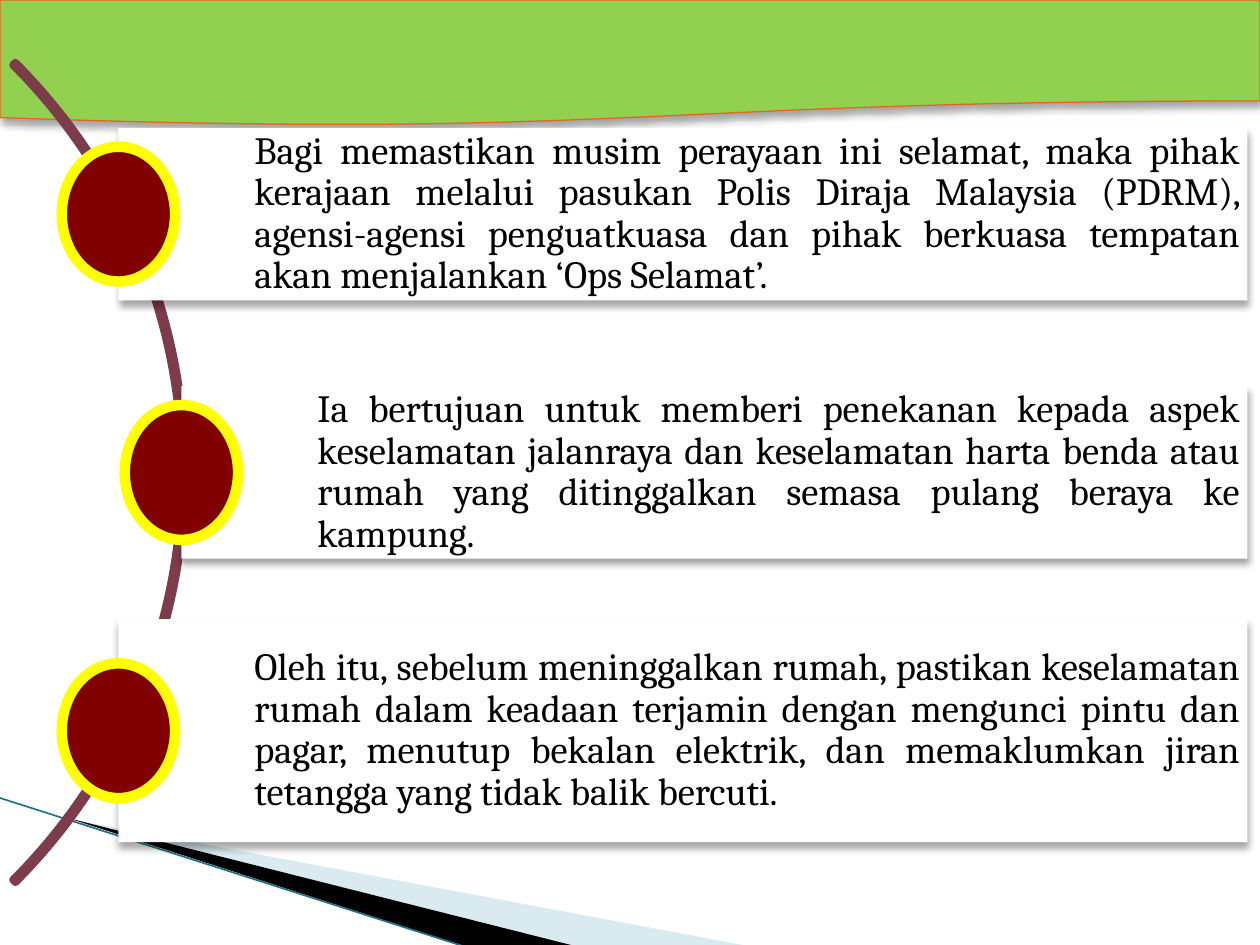
from dataclasses import dataclass

from lxml.etree import SubElement
from pptx import Presentation
from pptx.dml.color import RGBColor
from pptx.enum.shapes import MSO_CONNECTOR, MSO_SHAPE
from pptx.enum.text import MSO_ANCHOR, PP_ALIGN
from pptx.oxml.ns import qn
from pptx.util import Inches, Pt


@dataclass(frozen=True)
class Theme:
    pale_blue: str = "A0CBDC"
    teal: str = "1F7288"
    green: str = "92D050"
    orange: str = "EB641B"
    plum: str = "7D3C4A"
    maroon: str = "800000"
    yellow: str = "FFFF00"
    white: str = "FFFFFF"
    black: str = "000000"
    font: str = "Cambria"
    body_size: float = 22


THEME = Theme()
CARD_RIGHT = 9.9
BULLET_WIDTH, BULLET_HEIGHT = 0.9, 1.07
FIRST_CENTER, CENTER_STEP = 1.7, 2.05

# Left edge, height and text of each card
POINTS = [
    (0.94, 1.37,
     "Bagi memastikan musim perayaan ini selamat, maka pihak kerajaan melalui "
     "pasukan Polis Diraja Malaysia (PDRM), agensi-agensi penguatkuasa dan pihak "
     "berkuasa tempatan akan menjalankan ‘Ops Selamat’."),
    (1.44, 1.37,
     "Ia bertujuan untuk memberi penekanan kepada aspek keselamatan jalanraya dan "
     "keselamatan harta benda atau rumah yang ditinggalkan semasa pulang beraya ke "
     "kampung."),
    (0.94, 1.77,
     "Oleh itu, sebelum meninggalkan rumah, pastikan keselamatan rumah dalam "
     "keadaan terjamin dengan mengunci pintu dan pagar, menutup bekalan elektrik, "
     "dan memaklumkan jiran tetangga yang tidak balik bercuti."),
]


def style(shape, fill=None, line=None, width=0.75):
    shape.shadow.inherit = False
    if fill:
        shape.fill.solid()
        shape.fill.fore_color.rgb = RGBColor.from_string(fill)
    else:
        shape.fill.background()
    if line:
        shape.line.color.rgb = RGBColor.from_string(line)
        shape.line.width = Pt(width)
    else:
        shape.line.fill.background()


def add_alpha(color, percent):
    SubElement(color, qn("a:alpha"), val=str(percent * 1000))


def add_drop_shadow(shape):
    effects = shape._element.spPr.find(qn("a:effectLst"))
    shadow = SubElement(effects, qn("a:outerShdw"), blurRad=str(Pt(4)),
                        dist=str(Pt(3)), dir="5400000", rotWithShape="0")
    add_alpha(SubElement(shadow, qn("a:srgbClr"), val=THEME.black), 35)


def add_preset(slide, kind, box, **look):
    shape = slide.shapes.add_shape(kind, *map(Inches, box))
    style(shape, **look)
    return shape


def add_wedge(slide, corners, fill):
    start, *rest = [(Inches(x), Inches(y)) for x, y in corners]
    builder = slide.shapes.build_freeform(*start)
    builder.add_line_segments(rest, close=True)
    wedge = builder.convert_to_shape()
    style(wedge, fill=fill)
    return wedge


def add_corner_decoration(slide):
    pale_wedge = add_wedge(
        slide, [(0.55, 6.5), (5.95, 7.51), (4.56, 7.51)], THEME.pale_blue)
    add_alpha(pale_wedge._element.spPr.find(qn("a:solidFill"))[0], 40)
    add_wedge(slide, [(0.53, 6.49), (4.57, 7.51), (3.72, 7.52)], THEME.black)
    edge = slide.shapes.add_connector(
        MSO_CONNECTOR.STRAIGHT, Inches(-0.01), Inches(6.33), Inches(3.71), Inches(7.52))
    edge.line.color.rgb = RGBColor.from_string(THEME.teal)
    edge.line.width = Pt(0.95)
    SubElement(edge._element.spPr, qn("a:effectLst"))


def add_banner(slide, box):
    banner = add_preset(slide, MSO_SHAPE.FLOWCHART_DOCUMENT, box,
                        fill=THEME.green, line=THEME.orange)
    add_drop_shadow(banner)


def add_arc(slide, box):
    """Draw the right-hand quarter of a thin ring, from 315 to 45 degrees."""
    arc = add_preset(slide, MSO_SHAPE.BLOCK_ARC, box, line=THEME.plum, width=4.33)
    for index, value in enumerate((189, 27, 0.003)):
        arc.adjustments[index] = value


def add_card(slide, box, text):
    card = add_preset(slide, MSO_SHAPE.RECTANGLE, box, fill=THEME.white)
    add_drop_shadow(card)
    frame = card.text_frame
    frame.word_wrap = True
    frame.vertical_anchor = MSO_ANCHOR.MIDDLE
    frame.margin_left = Inches(1.08)
    frame.margin_top = frame.margin_right = frame.margin_bottom = Inches(0.06)
    paragraph = frame.paragraphs[0]
    paragraph.alignment = PP_ALIGN.JUSTIFY
    paragraph.line_spacing = 0.9
    run = paragraph.add_run()
    run.text = text
    run.font.name = THEME.font
    run.font.size = Pt(THEME.body_size)
    run.font.color.rgb = RGBColor.from_string(THEME.black)


def add_point(slide, left, center, height, text):
    """Place a card and the bullet centred on its left edge."""
    add_card(slide, (left, center - height / 2, CARD_RIGHT - left, height), text)
    bullet_box = (left - BULLET_WIDTH / 2, center - BULLET_HEIGHT / 2,
                  BULLET_WIDTH, BULLET_HEIGHT)
    add_preset(slide, MSO_SHAPE.OVAL, bullet_box,
               fill=THEME.maroon, line=THEME.yellow, width=6)


def main():
    presentation = Presentation()
    presentation.slide_width = Inches(10)
    presentation.slide_height = Inches(7.5)
    slide = presentation.slides.add_slide(presentation.slide_layouts[6])

    add_corner_decoration(slide)
    add_banner(slide, (0, 0, 10, 1))
    add_arc(slide, (-7.73, -0.85, 9.2, 9.2))
    for row, (left, height, text) in enumerate(POINTS):
        add_point(slide, left, FIRST_CENTER + row * CENTER_STEP, height, text)

    presentation.save("out.pptx")


if __name__ == "__main__":
    main()
